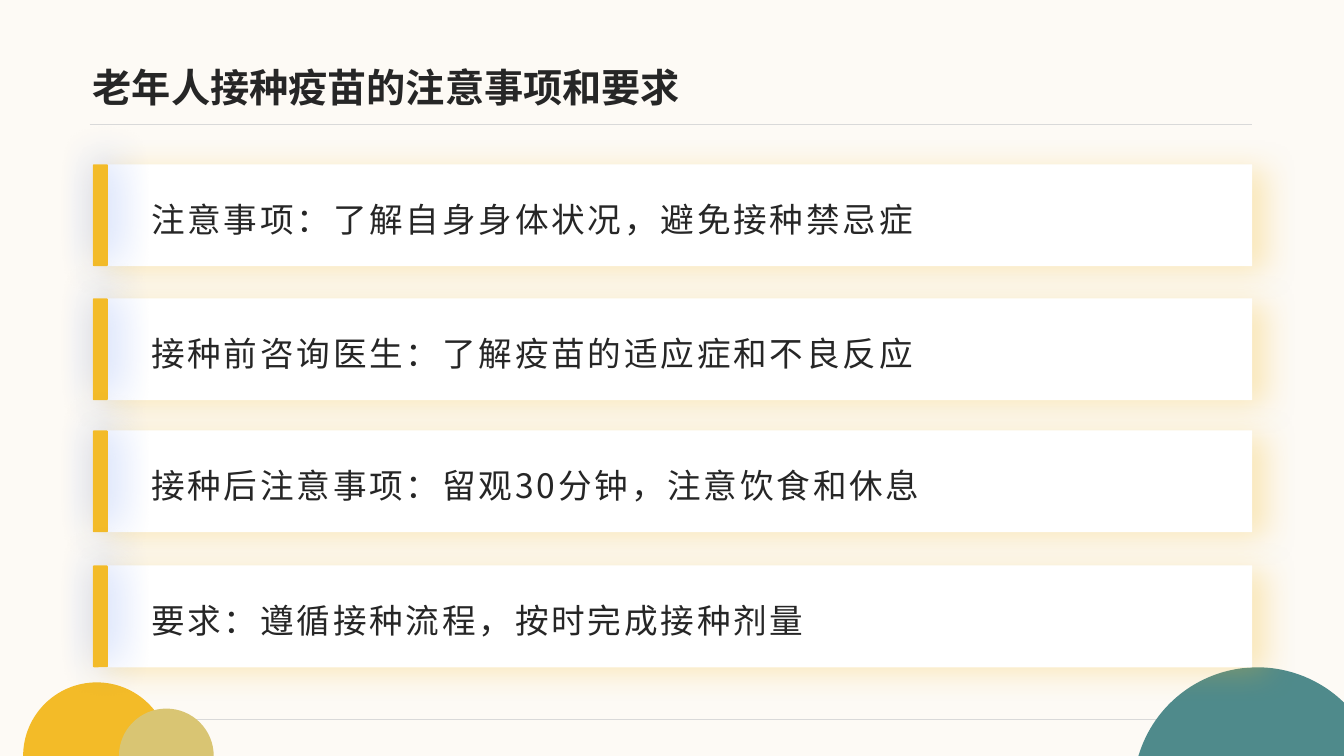
import math
from typing import NamedTuple

from lxml import etree
from pptx import Presentation
from pptx.dml.color import RGBColor
from pptx.enum import shapes, text
from pptx.oxml.ns import qn
from pptx.util import Inches, Pt

SLIDE_W, SLIDE_H = 13.33, 7.5
CARD_LEFT, CARD_W, CARD_H = 0.92, 11.5, 1.01
BAR_W = 0.15
COLORS = {
    "background": "FDFAF5",
    "rule": "D9D9D9",
    "yellow": "F3BB28",
    "sand": "D9C573",
    "teal": "4F8A8B",
    "white": "FFFFFF",
    "ink": "262626",
    "blue": "4575F0",
}


class Dome(NamedTuple):
    center_x: float
    center_y: float
    radius: float
    color: str


class Shadow(NamedTuple):
    color: str
    opacity: int
    blur: float
    distance: float
    angle: int


class Advice(NamedTuple):
    top: float
    words: str


YELLOW_DOME = Dome(0.96, 7.5, 0.73, "yellow")
SAND_DOME = Dome(1.65, 7.5, 0.47, "sand")
TEAL_DOME = Dome(12.47, 7.85, 1.23, "teal")
CARD_SHADOW = Shadow("yellow", 30, 22, 9, 17)
BAR_SHADOW = Shadow("blue", 45, 30, 5, 315)
ADVICE = [
    Advice(1.63, "注意事项：了解自身身体状况，避免接种禁忌症"),
    Advice(2.96, "接种前咨询医生：了解疫苗的适应症和不良反应"),
    Advice(4.27, "接种后注意事项：留观30分钟，注意饮食和休息"),
    Advice(5.61, "要求：遵循接种流程，按时完成接种剂量"),
]


def rgb(color: str) -> RGBColor:
    return RGBColor.from_string(COLORS[color])


def paint(shape, color: str) -> None:
    shape.shadow.inherit = False
    shape.fill.solid()
    shape.fill.fore_color.rgb = rgb(color)
    shape.line.fill.background()


def add_rule(slide, left: float, right: float, y: float) -> None:
    rule = slide.shapes.add_connector(
        shapes.MSO_CONNECTOR.STRAIGHT, Inches(left), Inches(y), Inches(right), Inches(y))
    rule.line.color.rgb = rgb("rule")
    rule.line.width = Pt(0.5)
    etree.SubElement(rule._element.spPr, qn("a:effectLst"))


def arc_points(dome: Dome, start: float, end: float) -> list[tuple[float, float]]:
    """Return the two control points and the end point of a clockwise arc."""
    x, y, r, _ = dome
    pull = 4 / 3 * math.tan((start - end) / 4)
    steps = [
        (math.cos(start) + pull * math.sin(start), -math.sin(start) + pull * math.cos(start)),
        (math.cos(end) - pull * math.sin(end), -math.sin(end) - pull * math.cos(end)),
        (math.cos(end), -math.sin(end)),
    ]
    return [(x + r * dx, y + r * dy) for dx, dy in steps]


def add_dome(slide, dome: Dome) -> None:
    """Draw the part of a circle that lies on the slide, as two curves."""
    x, y, r, color = dome
    right = min(x + r, SLIDE_W)
    start = math.pi - math.asin((y - SLIDE_H) / r)
    end = math.acos(min(1, (right - x) / r))
    outline = [(x + r * math.cos(start), SLIDE_H),
               *arc_points(dome, start, math.pi / 2), *arc_points(dome, math.pi / 2, end)]
    if right == SLIDE_W:
        outline.append((right, SLIDE_H))
    points = [(Inches(px), Inches(py)) for px, py in outline]
    builder = slide.shapes.build_freeform(*points[0])
    builder.add_line_segments(points[1:], close=True)
    shape = builder.convert_to_shape()
    lines = list(shape._element.iter(qn("a:lnTo")))
    for first in (0, 3):
        curve = etree.Element(qn("a:cubicBezTo"))
        lines[first].addprevious(curve)
        for line in lines[first:first + 3]:
            curve.append(line[0])
            line.getparent().remove(line)
    paint(shape, color)


def add_shadow(shape, shadow: Shadow) -> None:
    effects = shape._element.spPr.find(qn("a:effectLst"))
    outer = etree.SubElement(
        effects, qn("a:outerShdw"), blurRad=str(Pt(shadow.blur)), dist=str(Pt(shadow.distance)),
        dir=str(shadow.angle * 60000), algn="ctr", rotWithShape="0")
    tint = etree.SubElement(outer, qn("a:srgbClr"), val=COLORS[shadow.color])
    etree.SubElement(tint, qn("a:alpha"), val=str(shadow.opacity * 1000))


def add_panel(slide, top: float, width: float, color: str, rounding: float,
              shadow: Shadow) -> None:
    panel = slide.shapes.add_shape(
        shapes.MSO_SHAPE.ROUNDED_RECTANGLE, Inches(CARD_LEFT), Inches(top),
        Inches(width), Inches(CARD_H))
    panel.adjustments[0] = rounding
    paint(panel, color)
    add_shadow(panel, shadow)


def add_words(slide, words: str, left: float, top: float, width: float, height: float,
              size: int, font_name: str, inset: float = 0):
    """Add a vertically centred line of text and return its paragraph."""
    box = slide.shapes.add_textbox(Inches(left), Inches(top), Inches(width), Inches(height))
    frame = box.text_frame
    frame.word_wrap = True
    frame.vertical_anchor = text.MSO_ANCHOR.MIDDLE
    frame.margin_left = Inches(inset)
    frame.margin_right = frame.margin_top = frame.margin_bottom = 0
    paragraph = frame.paragraphs[0]
    paragraph.text = words
    font = paragraph.font
    font.size = Pt(size)
    font.name = font_name
    font.color.rgb = rgb("ink")
    return paragraph


def add_advice(slide, advice: Advice) -> None:
    add_panel(slide, advice.top, CARD_W, "white", 0, CARD_SHADOW)
    add_panel(slide, advice.top, BAR_W, "yellow", 0.08, BAR_SHADOW)
    line = add_words(slide, advice.words, 1.4, advice.top, 11.01, CARD_H,
                     24, "Noto Sans CJK SC", inset=0.1)
    line.line_spacing = 1.2
    for run in line.runs:
        properties = run._r.get_or_add_rPr()
        properties.set("spc", "200")
        etree.SubElement(properties, qn("a:ea"), typeface="Noto Sans CJK SC")


def main() -> None:
    deck = Presentation()
    deck.slide_width, deck.slide_height = Inches(SLIDE_W), Inches(SLIDE_H)
    slide = deck.slides.add_slide(deck.slide_layouts[6])
    slide.background.fill.solid()
    slide.background.fill.fore_color.rgb = rgb("background")

    add_rule(slide, 0.89, 12.42, 1.23)
    add_dome(slide, YELLOW_DOME)
    add_rule(slide, 1.69, 11.55, 7.14)
    add_dome(slide, SAND_DOME)
    add_dome(slide, TEAL_DOME)

    title = add_words(slide, "老年人接种疫苗的注意事项和要求", CARD_LEFT, 0.39, CARD_W, 0.94,
                      28, "Arial")
    title.font.bold = True
    for advice in ADVICE:
        add_advice(slide, advice)
    deck.save("out.pptx")


if __name__ == "__main__":
    main()
